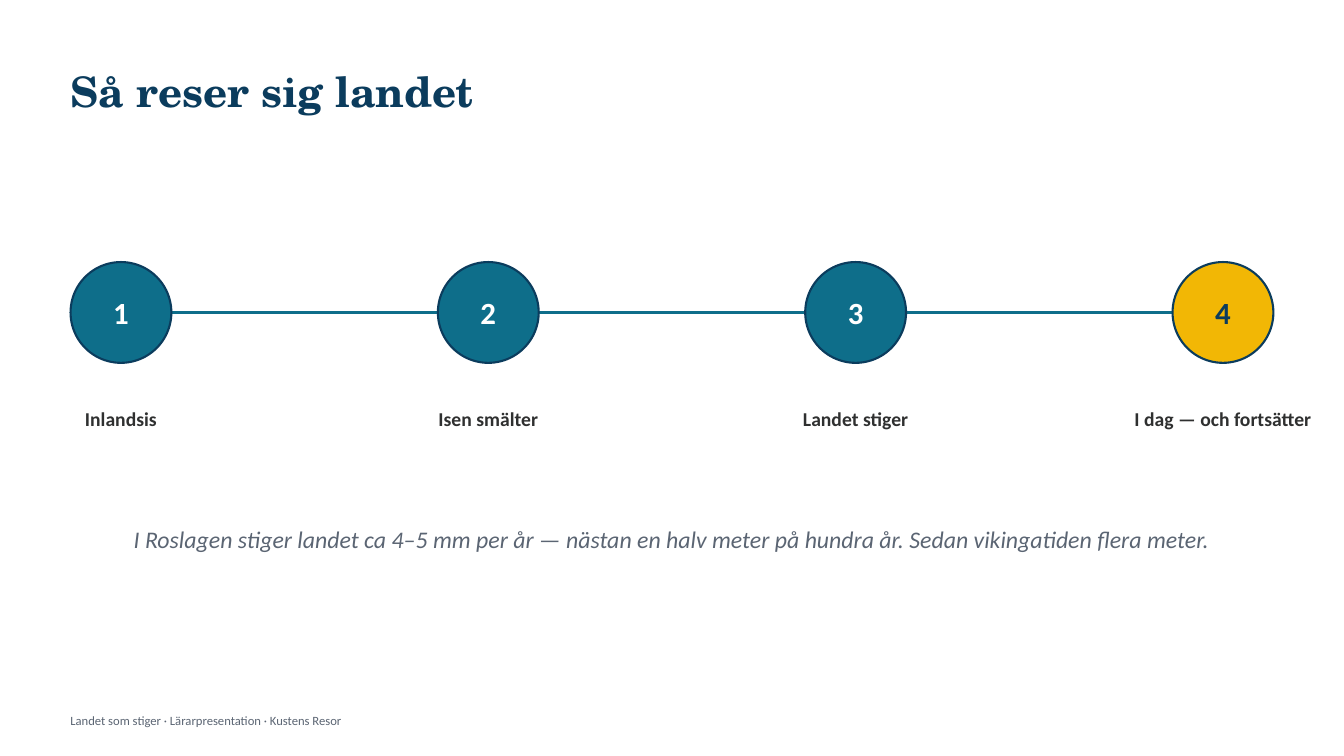
from lxml import etree
from pptx import Presentation
from pptx.dml.color import RGBColor
from pptx.enum.shapes import MSO_CONNECTOR, MSO_SHAPE
from pptx.enum.text import MSO_ANCHOR, PP_ALIGN
from pptx.oxml.ns import qn
from pptx.util import Inches, Pt

LEFT, CENTER = PP_ALIGN.LEFT, PP_ALIGN.CENTER
MIDDLE = MSO_ANCHOR.MIDDLE
OVAL = MSO_SHAPE.OVAL
STRAIGHT = MSO_CONNECTOR.STRAIGHT

HUES = {
    "navy": "0B3C5D", "teal": "0E6E8A", "gold": "F2B705",
    "white": "FFFFFF", "ink": "2F3030", "grey": "5B6573",
}
STEPS = ["Inlandsis", "Isen smälter", "Landet stiger", "I dag — och fortsätter"]


def tint(name):
    return RGBColor.from_string(HUES[name])


def write(shape, text, size, hue, align=CENTER, face="Calibri", bold=False, slant=False):
    frame = shape.text_frame
    frame.word_wrap = True
    frame.vertical_anchor = MIDDLE
    frame.text = text
    para = frame.paragraphs[0]
    para.alignment = align
    font = para.font
    font.name, font.size = face, Pt(size)
    font.bold, font.italic = bold, slant
    font.color.rgb = tint(hue)


deck = Presentation()
deck.slide_width, deck.slide_height = Inches(13.33), Inches(7.5)
slide = deck.slides.add_slide(deck.slide_layouts[5])
shapes = slide.shapes

title = shapes.title
title.left, title.top = Inches(0.6), Inches(0.45)
title.width, title.height = Inches(12.13), Inches(0.9)
write(title, "Så reser sig landet", 30, "navy", LEFT, "TeX Gyre Schola", True)

edge = Inches(0.7)
span = deck.slide_width - 2 * edge
disc = Inches(1)
top = Inches(2.6)
mid = top + disc // 2
pitch = (span - disc) // (len(STEPS) - 1)
wide = Inches(2.2)

for i, step in enumerate(STEPS):
    left = edge + i * pitch
    last = i == len(STEPS) - 1
    if not last:
        link = shapes.add_connector(STRAIGHT, left + disc, mid, left + pitch, mid)
        link.line.color.rgb = tint("teal")
        link.line.width = Pt(2.5)
        etree.SubElement(link._element.spPr, qn("a:effectLst"))

    ball = shapes.add_shape(OVAL, left, top, disc, disc)
    ball.shadow.inherit = False
    ball.fill.solid()
    ball.fill.fore_color.rgb = tint("gold" if last else "teal")
    ball.line.color.rgb = tint("navy")
    ball.line.width = Pt(1.5)
    write(ball, str(i + 1), 22, "navy" if last else "white", bold=True)

    label = shapes.add_textbox(left + (disc - wide) // 2, Inches(3.75), wide, Inches(0.8))
    write(label, step, 14, "ink", bold=True)

fact = shapes.add_textbox(edge, Inches(5), span, Inches(0.7))
write(
    fact,
    "I Roslagen stiger landet ca 4–5 mm per år — nästan en halv meter "
    "på hundra år. Sedan vikingatiden flera meter.",
    17, "grey", slant=True,
)

foot = shapes.add_textbox(Inches(0.6), Inches(7), Inches(9), Inches(0.3))
write(foot, "Landet som stiger · Lärarpresentation · Kustens Resor", 9, "grey", LEFT)

deck.save("out.pptx")
